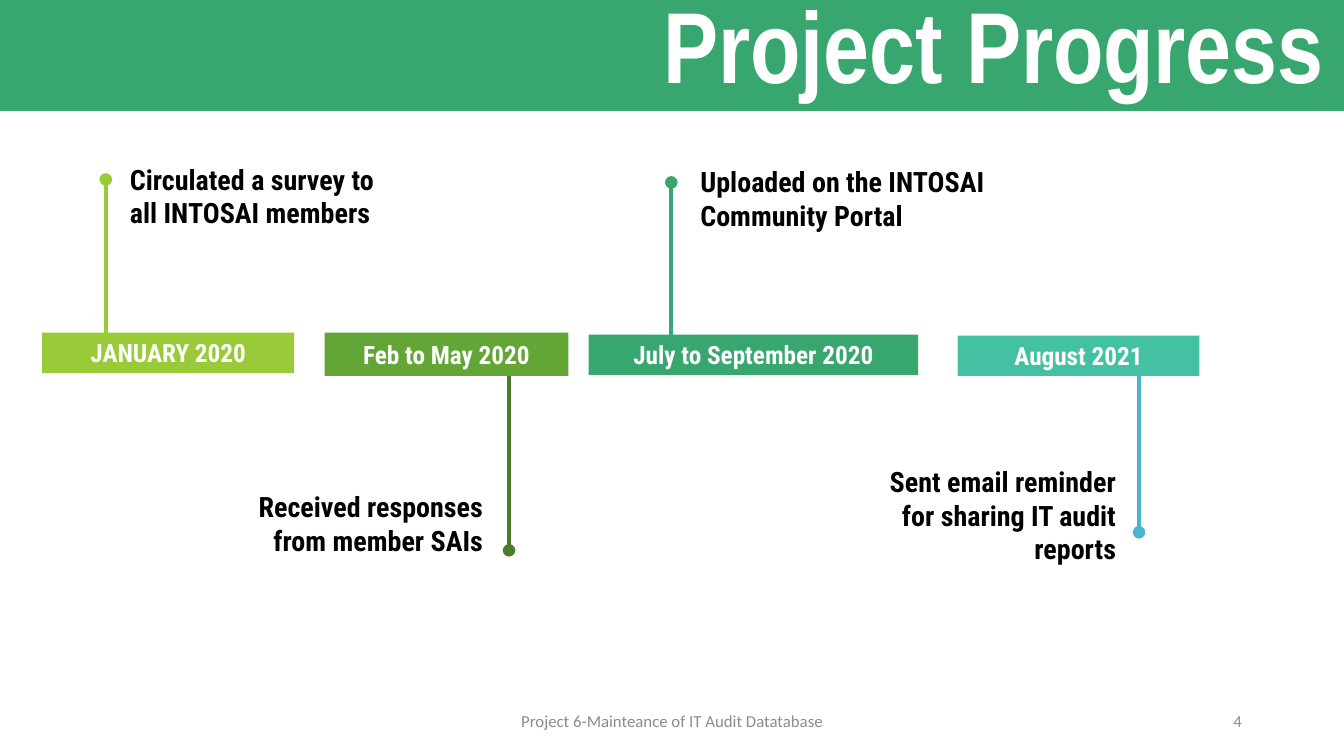
from dataclasses import dataclass

from lxml import etree
from pptx import Presentation
from pptx.dml.color import RGBColor
from pptx.enum.shapes import MSO_CONNECTOR, MSO_SHAPE
from pptx.enum.text import MSO_ANCHOR, PP_ALIGN
from pptx.oxml.ns import qn
from pptx.util import Pt

LEFT, CENTER, RIGHT = PP_ALIGN.LEFT, PP_ALIGN.CENTER, PP_ALIGN.RIGHT
MIDDLE = MSO_ANCHOR.MIDDLE
RECTANGLE = MSO_SHAPE.RECTANGLE
STRAIGHT = MSO_CONNECTOR.STRAIGHT


@dataclass(frozen=True)
class TextStyle:
    font: str
    size: int
    color: str
    bold: bool = True


@dataclass(frozen=True)
class Theme:
    green: str = "37A76F"
    lime: str = "99CB38"
    leaf: str = "63A537"
    dark_leaf: str = "4A7C29"
    teal: str = "44C1A3"
    blue: str = "4EB3CF"
    title: TextStyle = TextStyle("Arial Narrow", 72, "FFFFFF")
    caption: TextStyle = TextStyle("Roboto Condensed", 20, "000000")
    date: TextStyle = TextStyle("Roboto Condensed", 18, "FFFFFF")
    footer: TextStyle = TextStyle("Calibri", 12, "8C8C8C", False)


THEME = Theme()


@dataclass(frozen=True)
class Milestone:
    date: str
    bar: tuple
    bar_color: str
    caption: str
    caption_box: tuple
    align: PP_ALIGN
    stem: tuple  # x, y at the dot, y at the bar
    stem_color: str


MILESTONES = [
    Milestone("Feb to May 2020", (231.8, 237.6, 174.2, 31), THEME.leaf,
              "Received responses from member SAIs",
              (149.8, 361.4, 202.3, 24.5), RIGHT,
              (363.6, 393.1, 265.7), THEME.dark_leaf),
    Milestone("July to September 2020", (420.5, 239, 235.4, 28.8), THEME.green,
              "Uploaded on the INTOSAI Community Portal",
              (493.2, 130.3, 273.6, 23), LEFT,
              (479.5, 130.3, 247), THEME.green),
    Milestone("JANUARY 2020", (30.2, 237.6, 180, 28.8), THEME.lime,
              "Circulated a survey to all INTOSAI members",
              (85.7, 128.2, 208.8, 23), LEFT,
              (75.6, 128.2, 241.2), THEME.lime),
    Milestone("August 2021", (684, 239.8, 172.8, 28.8), THEME.teal,
              "Sent email reminder for sharing IT audit reports",
              (603.4, 356.4, 200.9, 23), RIGHT,
              (813.6, 380.2, 265.7), THEME.blue),
]


def write_text(shape, text, style, align, margin=7.2):
    text_frame = shape.text_frame
    text_frame.text = text
    text_frame.word_wrap = True
    text_frame.vertical_anchor = MIDDLE
    text_frame.margin_left = text_frame.margin_right = Pt(7.2)
    text_frame.margin_top = text_frame.margin_bottom = Pt(margin)
    paragraph = text_frame.paragraphs[0]
    paragraph.alignment = align
    font = paragraph.runs[0].font
    font.name = style.font
    font.size = Pt(style.size)
    font.bold = style.bold
    font.color.rgb = RGBColor.from_string(style.color)
    return paragraph


def add_text(slide, box, text, style, align, margin=7.2):
    shape = slide.shapes.add_textbox(*map(Pt, box))
    return write_text(shape, text, style, align, margin)


def add_bar(slide, box, color):
    shape = slide.shapes.add_shape(RECTANGLE, *map(Pt, box))
    shape.shadow.inherit = False
    shape.fill.solid()
    shape.fill.fore_color.rgb = RGBColor.from_string(color)
    shape.line.fill.background()
    return shape


def add_stem(slide, x, dot_y, bar_y, color):
    connector = slide.shapes.add_connector(STRAIGHT, Pt(x), Pt(dot_y), Pt(x), Pt(bar_y))
    connector.line.width = Pt(3)
    connector.line.color.rgb = RGBColor.from_string(color)
    # Round dot at the caption end, no shadow
    etree.SubElement(connector.line._get_or_add_ln(), qn("a:headEnd"), type="oval")
    etree.SubElement(connector._element.spPr, qn("a:effectLst"))


def add_milestone(slide, milestone):
    add_text(slide, milestone.caption_box, milestone.caption, THEME.caption, milestone.align)
    add_stem(slide, *milestone.stem, milestone.stem_color)
    bar = add_bar(slide, milestone.bar, milestone.bar_color)
    write_text(bar, milestone.date, THEME.date, CENTER)


def main():
    presentation = Presentation()
    presentation.slide_width = Pt(960)
    presentation.slide_height = Pt(540)
    slide = presentation.slides.add_slide(presentation.slide_layouts[6])

    # Header band and title
    add_bar(slide, (0, 0, 960, 79.2), THEME.green)
    title = add_text(slide, (294.5, -15.8, 658.8, 104.4), "Project Progress",
                     THEME.title, RIGHT, margin=3.6)
    title.line_spacing = 0.9

    # Footer
    add_text(slide, (318.2, 500.4, 324, 28.8), "Project 6-Mainteance of IT Audit Datatabase",
             THEME.footer, CENTER, margin=3.6)
    add_text(slide, (678.2, 500.4, 216, 28.8), "4", THEME.footer, RIGHT, margin=3.6)

    # Timeline
    for milestone in MILESTONES:
        add_milestone(slide, milestone)

    presentation.save("out.pptx")


if __name__ == "__main__":
    main()
